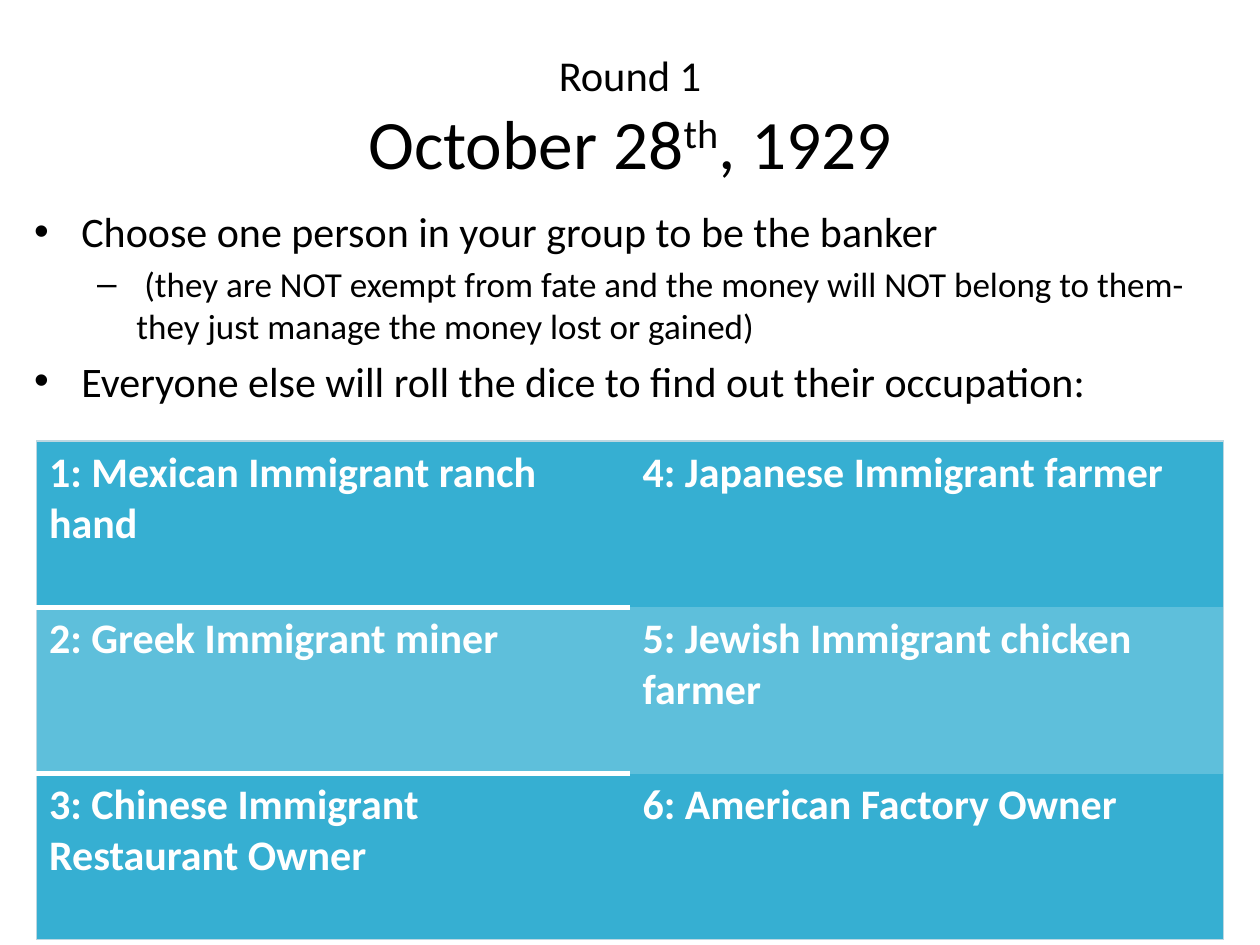
from dataclasses import dataclass
from typing import NamedTuple

from lxml.etree import SubElement as Sub
from pptx import Presentation
from pptx.dml.color import RGBColor as RGB
from pptx.enum.text import MSO_ANCHOR as Anchor, MSO_AUTO_SIZE as Fit, PP_ALIGN as Align
from pptx.oxml.ns import qn
from pptx.util import Inches, Pt


@dataclass(frozen=True)
class Theme:
    font: str = "Calibri"
    ink: str = "000000"
    white: str = "FFFFFF"
    teal: str = "36AFD2"
    pale: str = "5EBFDB"
    edge: str = "BCD7E1"
    round: float = 24.3
    date: float = 39.6
    text: float = 24
    note: float = 20


class Box(NamedTuple):
    left: float
    top: float
    width: float
    height: float


class Item(NamedTuple):
    text: str
    level: int
    size: float


THEME = Theme()
PLAIN = "{2D5ABB26-0587-4C30-8999-92F81FD0307C}"
ITEMS = [
    Item("Choose one person in your group to be the banker", 0, THEME.text),
    Item(" (they are NOT exempt from fate and the money will NOT belong to them-"
         "they just manage the money lost or gained)", 1, THEME.note),
    Item("Everyone else will roll the dice to find out their occupation:", 0, THEME.text),
]
JOBS = [
    ("1: Mexican Immigrant ranch hand", "4: Japanese Immigrant farmer"),
    ("2: Greek Immigrant miner", "5: Jewish Immigrant chicken farmer"),
    ("3: Chinese Immigrant Restaurant Owner", "6: American Factory Owner"),
]


def style(run, size: float, color: str = THEME.ink, bold: bool = False) -> None:
    font = run.font
    font.name, font.size, font.bold = THEME.font, Pt(size), bold
    font.color.rgb = RGB.from_string(color)


def place(shape, box: Box) -> None:
    shape.left, shape.top, shape.width, shape.height = map(Inches, box)


def draw_title(shape, box: Box) -> None:
    place(shape, box)
    frame = shape.text_frame
    frame.auto_size = Fit.NONE
    frame.vertical_anchor = Anchor.MIDDLE
    para = frame.paragraphs[0]
    para.alignment = Align.CENTER
    head = para.add_run()
    head.text = "Round 1"
    style(head, THEME.round)
    para.add_line_break()
    Sub(para._p.find(qn("a:br")), qn("a:rPr")).set("sz", str(round(THEME.round * 100)))
    for text, base in (("October 28", 0), ("th", 30000), (", 1929", 0)):
        run = para.add_run()
        run.text = text
        style(run, THEME.date)
        if base:
            run._r.get_or_add_rPr().set("baseline", str(base))


def draw_list(shape, box: Box, items: list[Item]) -> None:
    place(shape, box)
    frame = shape.text_frame
    frame.auto_size = Fit.NONE
    frame.text = "\n".join(item.text for item in items)
    for para, item in zip(frame.paragraphs, items):
        para.level = item.level
        style(para.runs[0], item.size)


def border(cell, side: str, color: str, width: float) -> None:
    line = Sub(cell._tc.get_or_add_tcPr(), qn(f"a:ln{side}"), w=str(Pt(width)))
    fill = Sub(line, qn("a:solidFill"))
    Sub(fill, qn("a:srgbClr"), val=color)


def draw_table(slide, box: Box, rows: list[tuple[str, str]]) -> None:
    last = len(rows) - 1
    table = slide.shapes.add_table(len(rows), 2, *map(Inches, box)).table
    table.first_row = table.horz_banding = False
    table._tbl.tblPr.find(qn("a:tableStyleId")).text = PLAIN
    for r, row in enumerate(rows):
        for c, text in enumerate(row):
            cell = table.cell(r, c)
            cell.text = text
            style(cell.text_frame.paragraphs[0].runs[0], THEME.text, THEME.white, True)
            border(cell, "R" if c else "L", THEME.edge, 0.75)
            if r == 0:
                border(cell, "T", THEME.edge, 0.75)
            if r == 0 and c == 0:
                border(cell, "B", THEME.white, 3)
            if r == 1 and c == 0:
                border(cell, "T", THEME.white, 3)
            if r == last:
                border(cell, "B", THEME.edge, 0.75)
            cell.fill.solid()
            cell.fill.fore_color.rgb = RGB.from_string(THEME.pale if r % 2 else THEME.teal)


def main() -> None:
    deck = Presentation()
    deck.slide_width, deck.slide_height = Inches(10), Inches(7.5)
    slide = deck.slides.add_slide(deck.slide_layouts[1])
    draw_title(slide.shapes.title, Box(0.5, 0.3, 9, 1.25))
    draw_list(slide.placeholders[1], Box(0.17, 1.58, 9.67, 3.42), ITEMS)
    draw_table(slide, Box(0.29, 3.5, 9.42, 3.96), JOBS)
    deck.save("out.pptx")


if __name__ == "__main__":
    main()
